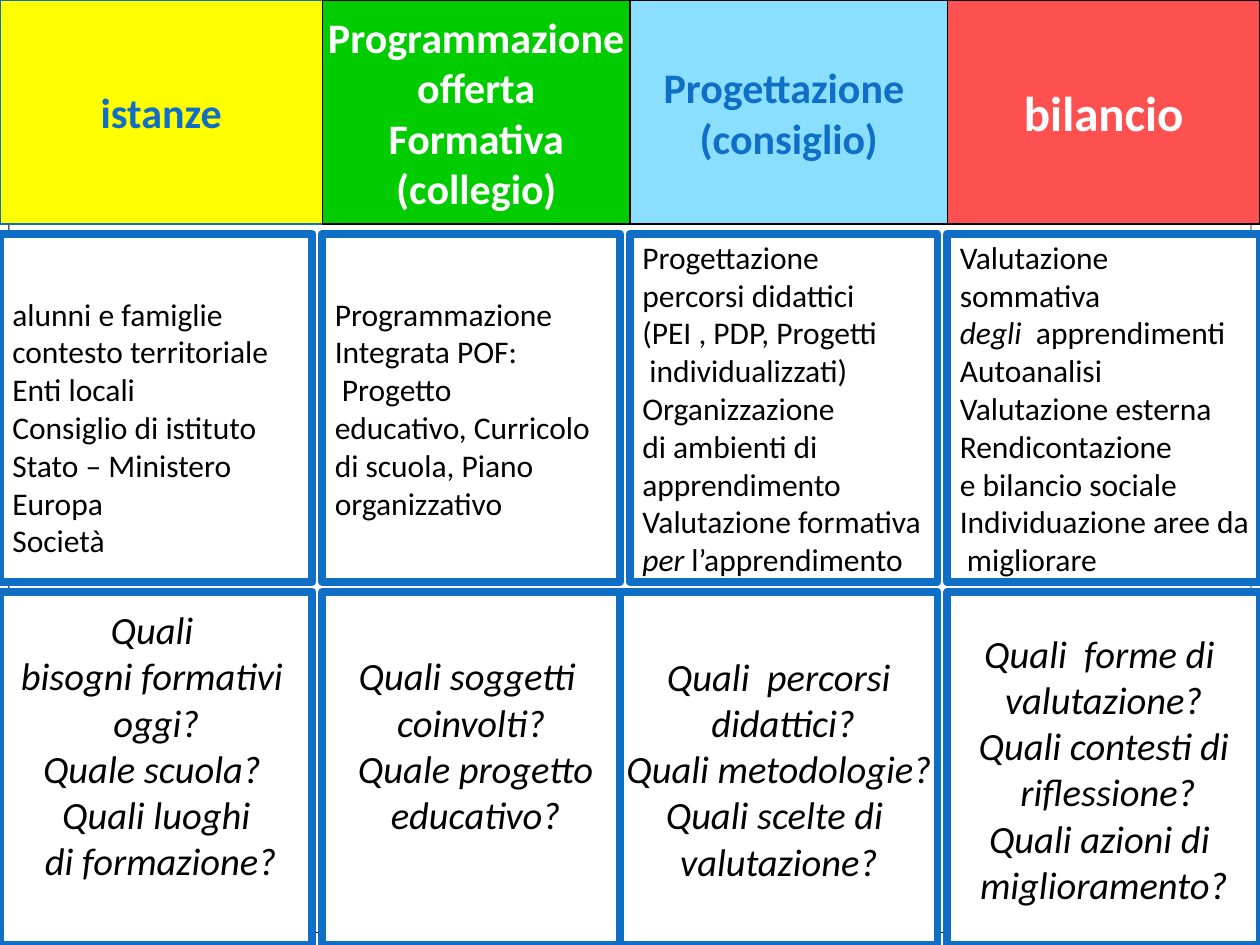
import pptx
import pptx.util
import pptx.dml.color
import pptx.enum.shapes
import pptx.enum.text
from pptx.util import Cm, Pt

RGBColor = pptx.dml.color.RGBColor
Shape = pptx.enum.shapes.MSO_SHAPE
Align = pptx.enum.text.PP_ALIGN

WHITE = RGBColor(0xFF, 0xFF, 0xFF)
BLACK = RGBColor(0x00, 0x00, 0x00)
BLUE = RGBColor(0x0F, 0x6F, 0xC6)
YELLOW = RGBColor(0xFF, 0xFF, 0x00)
GREEN = RGBColor(0x00, 0xCC, 0x00)
SKY = RGBColor(0x8A, 0xDF, 0xFF)
RED = RGBColor(0xFF, 0x50, 0x50)

PAGE_WIDTH, PAGE_HEIGHT = 25.4, 19.05
COLUMN_EDGES = [0, 6.5, 12.7, 19.1, PAGE_WIDTH]
GAP = 0.2
HEADER_HEIGHT = 4.52
TOPICS_TOP, TOPICS_HEIGHT = 4.72, 7.01
QUESTIONS_TOP = TOPICS_TOP + TOPICS_HEIGHT + GAP
INSET = 0.13

HEADERS = [
    (["istanze"], YELLOW, BLUE, BLUE, 24),
    (["Programmazione", "offerta", "Formativa", "(collegio)"], GREEN, BLACK, WHITE, 24),
    (["Progettazione ", "(consiglio)"], SKY, BLACK, BLUE, 24),
    (["bilancio"], RED, BLACK, WHITE, 28),
]
TOPICS = [
    ["alunni e famiglie", "contesto territoriale", "Enti locali",
     "Consiglio di istituto", "Stato – Ministero", "Europa", "Società"],
    ["Programmazione", "Integrata POF:", " Progetto", "educativo, Curricolo",
     "di scuola, Piano", "organizzativo"],
    ["Progettazione", "percorsi didattici", "(PEI , PDP, Progetti",
     " individualizzati)", "Organizzazione", "di ambienti di",
     "apprendimento", "Valutazione formativa", "*per* l’apprendimento"],
    ["Valutazione", "sommativa", "*degli*  apprendimenti", "Autoanalisi",
     "Valutazione esterna", "Rendicontazione", "e bilancio sociale",
     "Individuazione aree da", " migliorare"],
]
TOPIC_DROPS = [0.76, 0, 0, 0]
QUESTIONS = [
    ["Quali ", "bisogni formativi ", "oggi?", "Quale scuola? ",
     "Quali luoghi", " di formazione?"],
    ["Quali soggetti ", "coinvolti?", " Quale progetto", " educativo?"],
    ["Quali  percorsi", " didattici?", "Quali metodologie?",
     "Quali scelte di ", "valutazione?"],
    ["Quali  forme di ", "valutazione?", "Quali contesti di",
     " riflessione?", "Quali azioni di ", "miglioramento?"],
]
QUESTION_RISES = [0.95, 0.95, 0, 0]


def add_box(page, kind, left, top, width, height, fill, line, weight):
    """Add a filled, outlined shape without shadow."""
    box = page.shapes.add_shape(kind, Cm(left), Cm(top), Cm(width), Cm(height))
    box.shadow.inherit = False
    box.fill.solid()
    box.fill.fore_color.rgb = fill
    box.line.color.rgb = line
    box.line.width = Pt(weight)
    return box


def write_lines(box, lines, size, color, align, bold=False, italic=False, drop=0, rise=0):
    """Write one paragraph per line; asterisks enclose italic words."""
    frame = box.text_frame
    frame.word_wrap = False
    frame.vertical_anchor = pptx.enum.text.MSO_ANCHOR.MIDDLE
    frame.margin_top = Cm(INSET + drop)
    frame.margin_bottom = Cm(INSET + rise)
    for number, line in enumerate(lines):
        para = frame.add_paragraph() if number else frame.paragraphs[0]
        para.alignment = align
        para.font.name = "Calibri"
        para.font.size = Pt(size)
        para.font.color.rgb = color
        para.font.bold = bold
        para.font.italic = italic
        for part, words in enumerate(line.split("*")):
            if words:
                span = para.add_run()
                span.text = words
                if part % 2:
                    span.font.italic = True


def add_backdrop(page):
    """Add the rounded frame behind the grid."""
    frame = add_box(page, Shape.ROUNDED_RECTANGLE, 0.18, 0.2, 25.04, 18.6, WHITE, BLACK, 0.5)
    frame.adjustments[0] = 0.05


def add_header(page, left, width, header):
    """Add the coloured heading of one column."""
    lines, fill, line, color, size = header
    box = add_box(page, Shape.RECTANGLE, left, 0, width, HEADER_HEIGHT, fill, line, 0.75)
    write_lines(box, lines, size, color, Align.CENTER, bold=True)


def add_topics(page, left, width, lines, drop):
    """Add the topic list of one column."""
    box = add_box(page, Shape.RECTANGLE, left, TOPICS_TOP, width, TOPICS_HEIGHT,
                  WHITE, BLUE, 4.5)
    write_lines(box, lines, 18, BLACK, Align.LEFT, drop=drop)


def add_questions(page, left, width, lines, rise):
    """Add the guiding questions of one column."""
    box = add_box(page, Shape.RECTANGLE, left, QUESTIONS_TOP, width,
                  PAGE_HEIGHT - QUESTIONS_TOP, WHITE, BLUE, 4.5)
    write_lines(box, lines, 22, BLACK, Align.CENTER, italic=True, rise=rise)


def main():
    """Build the four-column slide and save it."""
    deck = pptx.Presentation()
    deck.slide_width, deck.slide_height = Cm(PAGE_WIDTH), Cm(PAGE_HEIGHT)
    page = deck.slides.add_slide(deck.slide_layouts[6])
    add_backdrop(page)
    for column, header in enumerate(HEADERS):
        left, right = COLUMN_EDGES[column:column + 2]
        inner_right = right if right == PAGE_WIDTH else right - GAP
        question_left = left - GAP if column == 2 else left
        add_header(page, left, right - left, header)
        add_topics(page, left, inner_right - left, TOPICS[column], TOPIC_DROPS[column])
        add_questions(page, question_left, inner_right - question_left,
                      QUESTIONS[column], QUESTION_RISES[column])
    deck.save("out.pptx")


if __name__ == "__main__":
    main()
